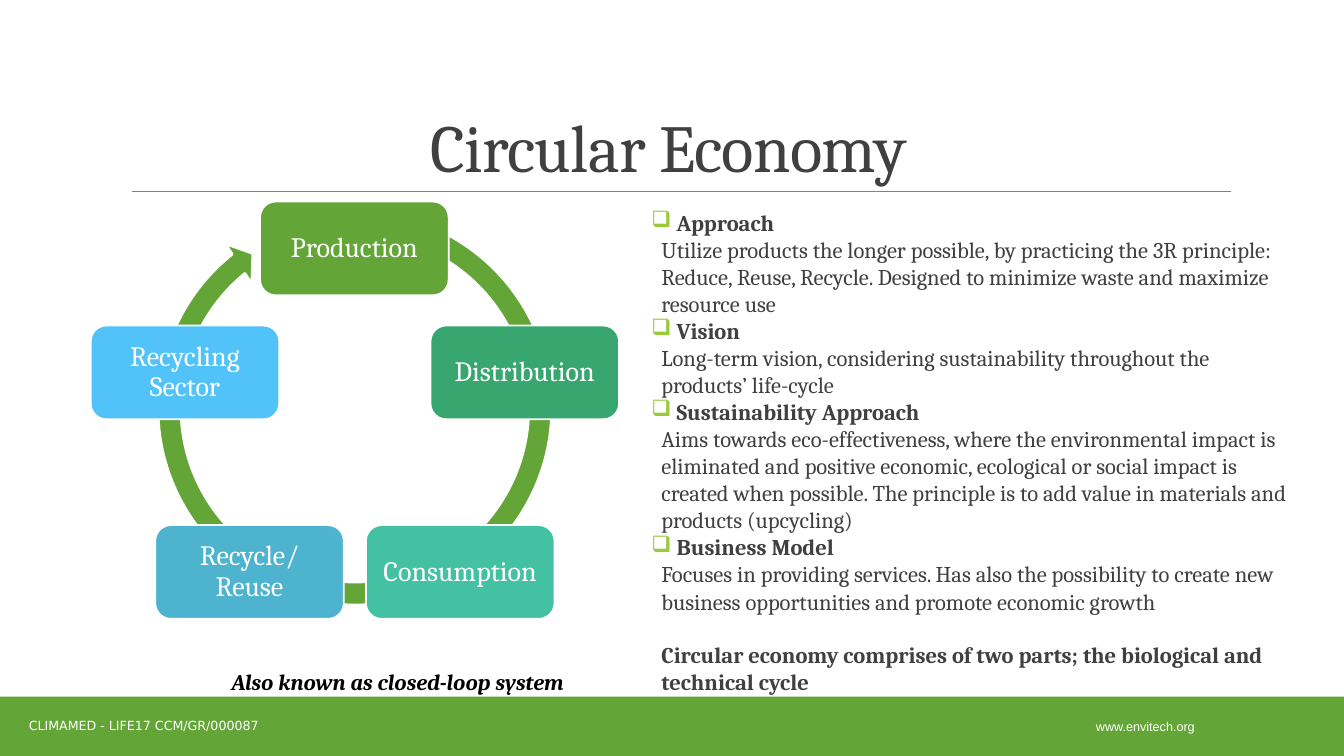
from dataclasses import dataclass
from math import cos, radians, sin
from typing import Any

from lxml.etree import SubElement
from pptx import Presentation
from pptx.dml.color import RGBColor
from pptx.enum.shapes import MSO_CONNECTOR as Connector, MSO_SHAPE as Preset
from pptx.enum.text import MSO_ANCHOR as Anchor, PP_ALIGN as Align
from pptx.oxml.ns import qn
from pptx.util import Emu, Pt

EMU_PER_PX = 9144
GREEN = "63A537"
LIME = "99CB38"
WHITE = "FFFFFF"
DARK = "404040"
RING_CENTER = (352, 424)
RING_RADIUS = 177
STAGE_SIZE = (187, 93)
ARROW_ADJUSTMENTS = (0.055, 3.307, 138.676, 173.304, 0.058)


@dataclass
class Box:
    left: int
    top: int
    width: int
    height: int


@dataclass
class Style:
    size: float
    color: str
    font: str = "Cambria"
    bold: bool = False
    italic: bool = False
    tracking: int = 0


@dataclass
class Label:
    text: str
    box: Box
    style: Style
    align: Align = Align.CENTER
    anchor: Anchor = Anchor.MIDDLE
    line_spacing: float = 1.0


@dataclass
class Stage:
    text: str
    color: str


@dataclass
class Topic:
    heading: str
    detail: str


STAGES = [
    Stage("Production", GREEN),
    Stage("Distribution", "37A76F"),
    Stage("Consumption", "44C1A3"),
    Stage("Recycle/ Reuse", "4EB3CF"),
    Stage("Recycling Sector", "51C3F9"),
]

TOPICS = [
    Topic("Approach",
          "Utilize products the longer possible, by practicing the 3R principle: Reduce, Reuse, "
          "Recycle. Designed to minimize waste and maximize resource use"),
    Topic("Vision",
          "Long-term vision, considering sustainability throughout the products’ life-cycle"),
    Topic("Sustainability Approach",
          "Aims towards eco-effectiveness, where the environmental impact is eliminated and "
          "positive economic, ecological or social impact is created when possible. The principle "
          "is to add value in materials and products (upcycling)"),
    Topic("Business Model",
          "Focuses in providing services. Has also the possibility to create new business "
          "opportunities and promote economic growth"),
]
CONCLUSION = "Circular economy comprises of two parts; the biological and technical cycle"

LABELS = [
    Label("www.envitech.org", Box(1013, 701, 246, 40), Style(9, WHITE, "Arial")),
    Label("CLIMAMED - LIFE17 CCM/GR/000087", Box(-16, 700, 317, 40),
          Style(9, WHITE, "DejaVu Sans")),
    Label("Circular Economy ", Box(120, 31, 1100, 159), Style(48, DARK, tracking=-50),
          anchor=Anchor.BOTTOM, line_spacing=0.85),
    Label("Also known as closed-loop system", Box(220, 645, 599, 46),
          Style(16, "000000", bold=True, italic=True), Align.LEFT, Anchor.TOP, 1.5),
]


def px(length: float) -> Emu:
    return Emu(round(length * EMU_PER_PX))


def rgb(color: str) -> RGBColor:
    return RGBColor.from_string(color)


def place(box: Box) -> tuple[Emu, Emu, Emu, Emu]:
    return px(box.left), px(box.top), px(box.width), px(box.height)


def set_insets(frame: Any, horizontal: int, vertical: int) -> None:
    frame.margin_left = frame.margin_right = px(horizontal)
    frame.margin_top = frame.margin_bottom = px(vertical)


def add_run(paragraph: Any, text: str, style: Style) -> None:
    run = paragraph.add_run()
    run.text = text
    font = run.font
    font.name, font.size = style.font, Pt(style.size)
    font.bold, font.italic = style.bold, style.italic
    font.color.rgb = rgb(style.color)
    if style.tracking:
        run._r.get_or_add_rPr().set("spc", str(style.tracking))


def add_label(slide: Any, label: Label) -> None:
    frame = slide.shapes.add_textbox(*place(label.box)).text_frame
    frame.word_wrap = True
    frame.vertical_anchor = label.anchor
    paragraph = frame.paragraphs[0]
    paragraph.alignment = label.align
    paragraph.line_spacing = label.line_spacing
    add_run(paragraph, label.text, label.style)


def add_block(slide: Any, preset: Preset, box: Box, color: str, border: float = 0) -> Any:
    shape = slide.shapes.add_shape(preset, *place(box))
    shape.shadow.inherit = False
    shape.fill.solid()
    shape.fill.fore_color.rgb = rgb(color)
    if border:
        shape.line.color.rgb = rgb(WHITE)
        shape.line.width = Pt(border)
    else:
        shape.line.fill.background()
    return shape


def add_rule(slide: Any, left: int, right: int, top: int) -> None:
    rule = slide.shapes.add_connector(Connector.STRAIGHT, px(left), px(top), px(right), px(top))
    rule.line.color.rgb = rgb("808080")
    rule.line.width = Pt(0.5)
    SubElement(rule._element.spPr, qn("a:effectLst"))


def add_cycle(slide: Any) -> None:
    arrow = add_block(slide, Preset.CIRCULAR_ARROW, Box(144, 197, 416, 416), GREEN, 2)
    for index, value in enumerate(ARROW_ADJUSTMENTS):
        arrow.adjustments[index] = value
    width, height = STAGE_SIZE
    for index, stage in enumerate(STAGES):
        angle = radians(360 / len(STAGES) * index)
        left = round(RING_CENTER[0] + RING_RADIUS * sin(angle) - width / 2)
        top = round(RING_CENTER[1] - RING_RADIUS * cos(angle) - height / 2)
        shape = add_block(slide, Preset.ROUNDED_RECTANGLE, Box(left, top, width, height),
                          stage.color, 1.25)
        frame = shape.text_frame
        frame.word_wrap = True
        frame.vertical_anchor = Anchor.MIDDLE
        set_insets(frame, 8, 8)
        paragraph = frame.paragraphs[0]
        paragraph.alignment = Align.CENTER
        paragraph.line_spacing = 0.9
        add_run(paragraph, stage.text, Style(20, WHITE))


def set_indent(paragraph: Any, margin: int, bullet: str = "") -> None:
    properties = paragraph._p.get_or_add_pPr()
    properties.set("marL", str(px(margin)))
    properties.set("indent", str(px(-margin if bullet else 0)))
    if bullet:
        color = SubElement(properties, qn("a:buClr"))
        SubElement(color, qn("a:srgbClr")).set("val", LIME)
        SubElement(properties, qn("a:buChar")).set("char", bullet)


def add_topics(slide: Any) -> None:
    heading_style = Style(16.1, DARK, bold=True)
    detail_style = Style(16.1, DARK)
    frame = slide.shapes.add_textbox(*place(Box(646, 202, 631, 498))).text_frame
    frame.word_wrap = True
    set_insets(frame, 0, 5)
    for index, topic in enumerate(TOPICS):
        heading = frame.add_paragraph() if index else frame.paragraphs[0]
        set_indent(heading, 25, "❑")
        add_run(heading, topic.heading, heading_style)
        detail = frame.add_paragraph()
        set_indent(detail, 10)
        add_run(detail, topic.detail, detail_style)
    conclusion = frame.add_paragraph()
    set_indent(conclusion, 10)
    conclusion.space_before = Pt(19)
    add_run(conclusion, CONCLUSION, heading_style)


def main() -> None:
    presentation = Presentation()
    presentation.slide_width, presentation.slide_height = px(1333), px(750)
    slide = presentation.slides.add_slide(presentation.slide_layouts[6])
    add_rule(slide, 131, 1221, 190)
    add_block(slide, Preset.RECTANGLE, Box(0, 691, 1333, 59), GREEN)
    add_cycle(slide)
    add_topics(slide)
    for label in LABELS:
        add_label(slide, label)
    presentation.save("out.pptx")


if __name__ == "__main__":
    main()
